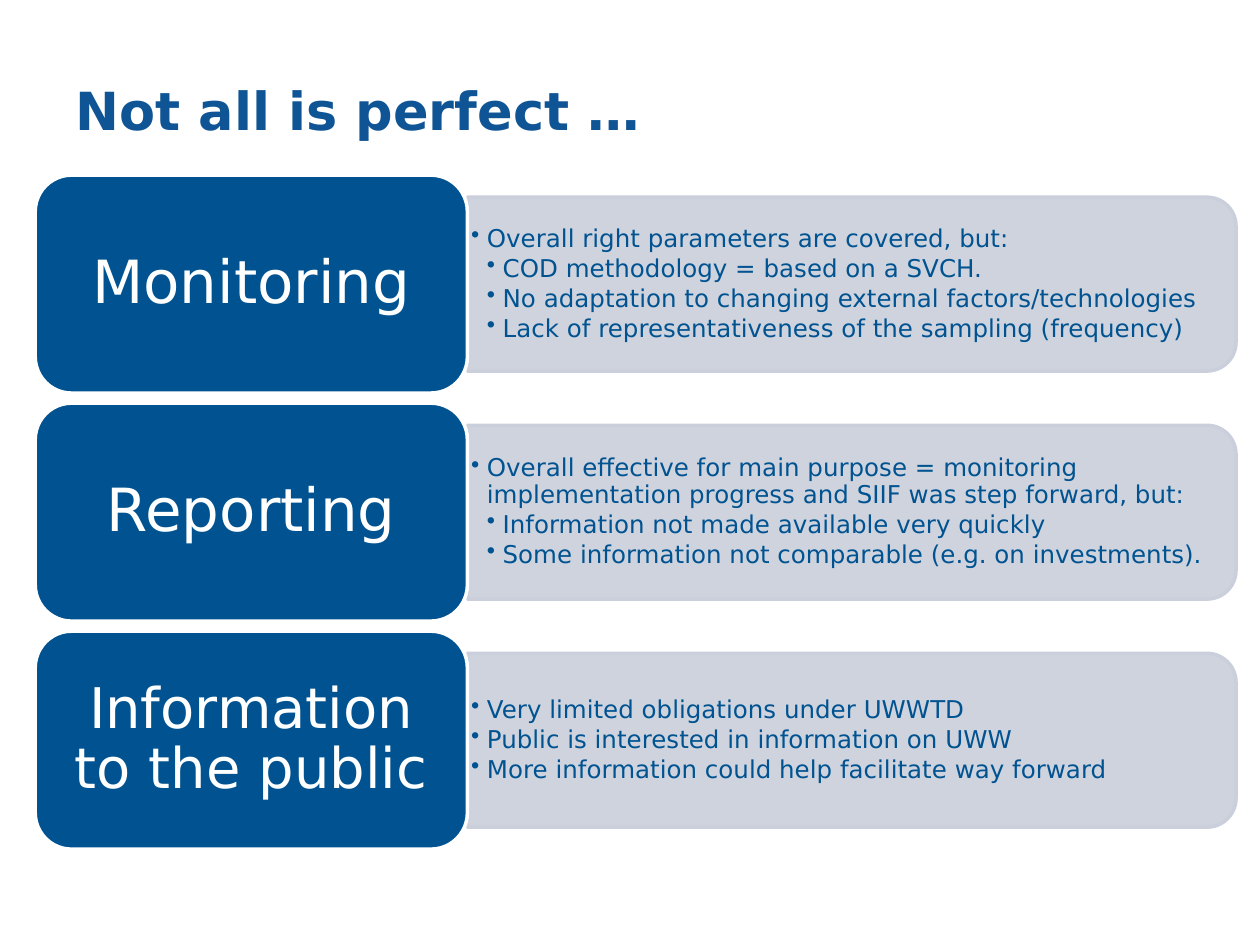
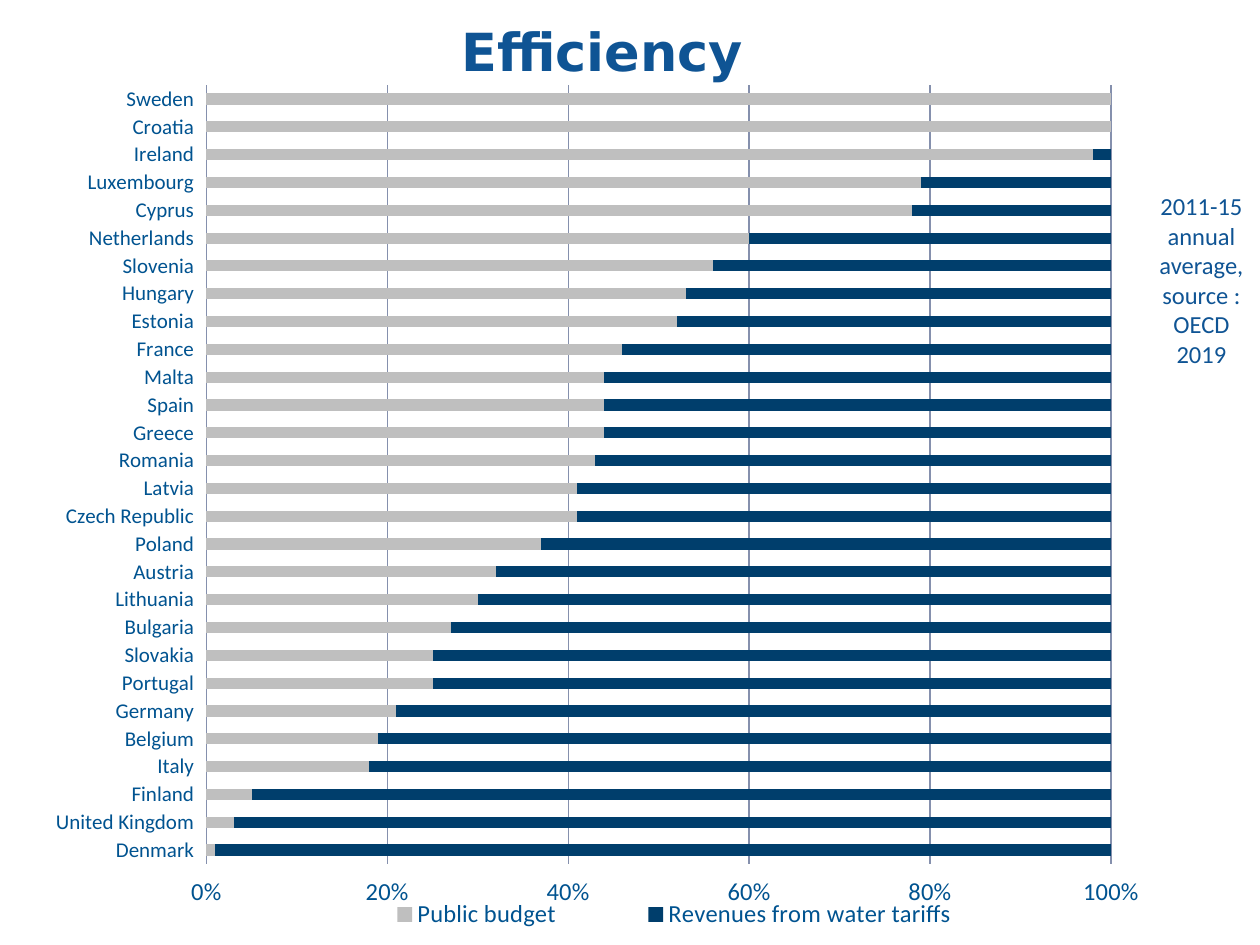
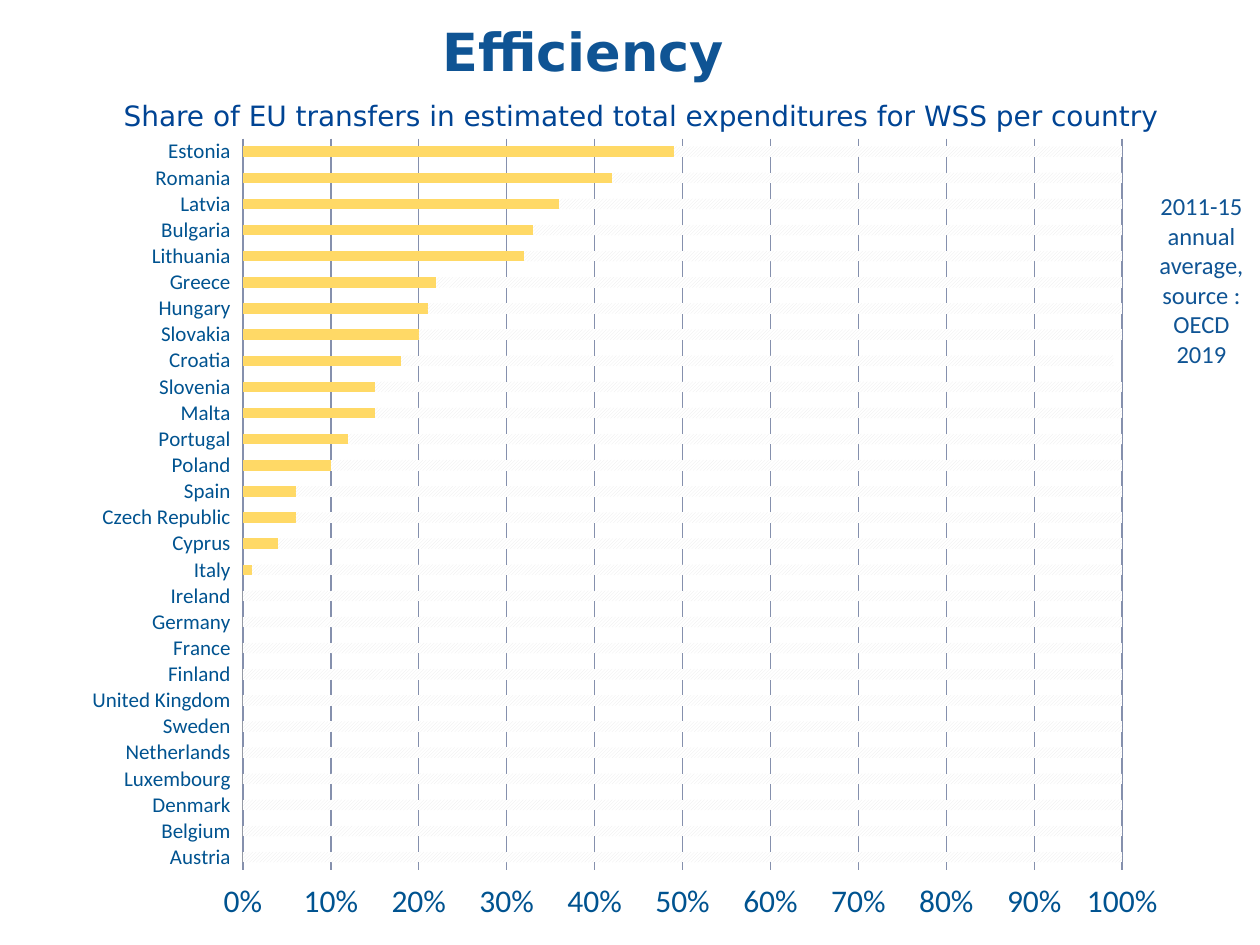
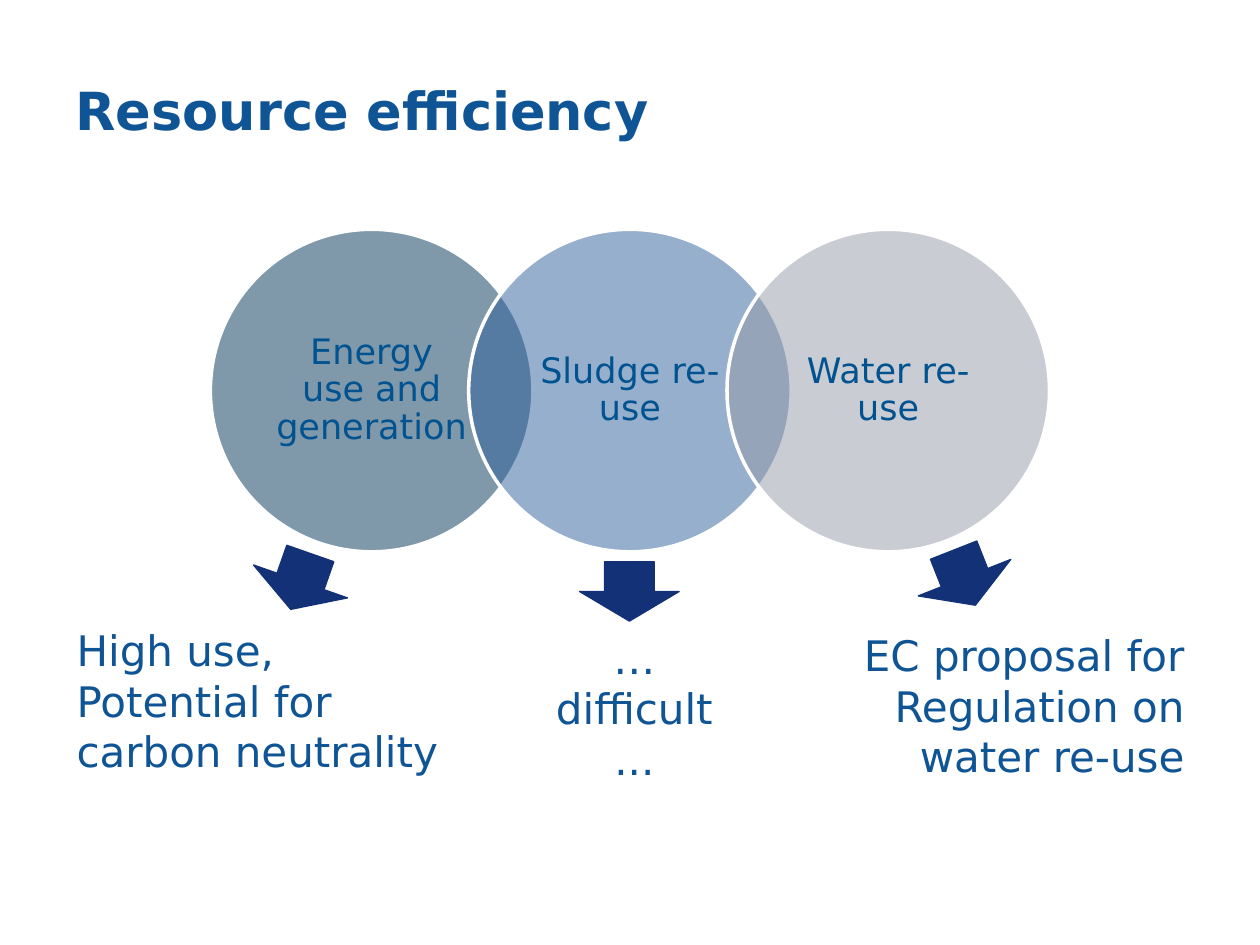
from dataclasses import dataclass

from lxml import etree
from pptx import Presentation
from pptx.chart.data import CategoryChartData
from pptx.dml.color import RGBColor
from pptx.enum.chart import XL_CHART_TYPE, XL_LEGEND_POSITION, XL_TICK_MARK
from pptx.enum.dml import MSO_PATTERN
from pptx.enum.shapes import MSO_SHAPE
from pptx.enum.text import MSO_ANCHOR, MSO_AUTO_SIZE, PP_ALIGN
from pptx.oxml.ns import qn
from pptx.util import Emu, Inches, Pt

LEFT, MID, RIGHT = PP_ALIGN.LEFT, PP_ALIGN.CENTER, PP_ALIGN.RIGHT
TOP, CENTRE = MSO_ANCHOR.TOP, MSO_ANCHOR.MIDDLE
ROUND, TAB = MSO_SHAPE.ROUNDED_RECTANGLE, MSO_SHAPE.ROUND_2_SAME_RECTANGLE
DISC, ARROW = MSO_SHAPE.OVAL, MSO_SHAPE.RIGHT_ARROW
STACK, SHARE = XL_CHART_TYPE.BAR_STACKED, XL_CHART_TYPE.BAR_STACKED_100
BELOW, OUT = XL_LEGEND_POSITION.BOTTOM, XL_TICK_MARK.OUTSIDE
HATCH = MSO_PATTERN.DARK_UPWARD_DIAGONAL

WIDTH, HEIGHT = Inches(10), Inches(7.5)
COLS, ROWS = 100, 75  # the grid that all places are given in


@dataclass(frozen=True)
class Theme:
    face: str = "DejaVu Sans"
    chart_face: str = "Calibri"
    title: str = "0F5494"
    blue: str = "005390"
    deep: str = "004494"
    navy: str = "133176"
    panel: str = "CACFDB"
    white: str = "FFFFFF"
    grid: str = "8590AD"
    budget: str = "BFBFBF"
    tariff: str = "003E6C"
    funds: str = "FFD966"
    rest: str = "EAEAEA"
    discs: tuple = ("003257", "2E609C", "959BA7")
    head_size: int = 30
    label_size: int = 34
    note_size: int = 24
    disc_size: int = 20
    sub_size: int = 16
    list_size: int = 14
    cat_size: int = 12


T = Theme()

TOPICS = [
    ("Monitoring", T.label_size, [
        (0, "Overall right parameters are covered, but:"),
        (1, "COD methodology = based on a SVCH."),
        (1, "No adaptation to changing external factors/technologies"),
        (1, "Lack of representativeness of the sampling (frequency)")]),
    ("Reporting", T.label_size, [
        (0, "Overall effective for main purpose = monitoring implementation "
            "progress and SIIF was step forward, but:"),
        (1, "Information not made available very quickly"),
        (1, "Some information not comparable (e.g. on investments).")]),
    ("Information to the public", T.label_size - 2, [
        (0, "Very limited obligations under UWWTD"),
        (0, "Public is interested in information on UWW"),
        (0, "More information could help facilitate way forward")]),
]

# Percent paid from the public budget; tariffs pay the rest
BUDGET = {
    "Denmark": 1, "United Kingdom": 3, "Finland": 5, "Italy": 18,
    "Belgium": 19, "Germany": 21, "Portugal": 25, "Slovakia": 25,
    "Bulgaria": 27, "Lithuania": 30, "Austria": 32, "Poland": 37,
    "Czech Republic": 41, "Latvia": 41, "Romania": 43, "Greece": 44,
    "Spain": 44, "Malta": 44, "France": 46, "Estonia": 52, "Hungary": 53,
    "Slovenia": 56, "Netherlands": 60, "Cyprus": 78, "Luxembourg": 79,
    "Ireland": 98, "Croatia": 100, "Sweden": 100,
}

# Share of EU transfers, and the share left over
FUNDS = {
    "Austria": (0, 1), "Belgium": (0, 1), "Denmark": (0, 1),
    "Luxembourg": (0, 1), "Netherlands": (0, 1), "Sweden": (0, 1),
    "United Kingdom": (0, 1), "Finland": (0, 1), "France": (0, 1),
    "Germany": (0, 1), "Ireland": (0, 1), "Italy": (0.01, 0.99),
    "Cyprus": (0.04, 0.96), "Czech Republic": (0.06, 0.94),
    "Spain": (0.06, 0.94), "Poland": (0.1, 0.9), "Portugal": (0.12, 0.88),
    "Malta": (0.15, 0.85), "Slovenia": (0.15, 0.85),
    "Croatia": (0.18, 0.81), "Slovakia": (0.2, 0.8),
    "Hungary": (0.21, 0.79), "Greece": (0.22, 0.78),
    "Lithuania": (0.32, 0.68), "Bulgaria": (0.33, 0.68),
    "Latvia": (0.36, 0.64), "Romania": (0.42, 0.58), "Estonia": (0.49, 0.51),
}


def place(col, row, cols, rows):
    """Turn grid cells into left, top, width and height."""
    return (Emu(round(WIDTH * col / COLS)), Emu(round(HEIGHT * row / ROWS)),
            Emu(round(WIDTH * cols / COLS)), Emu(round(HEIGHT * rows / ROWS)))


def rgb(code):
    return RGBColor.from_string(code)


def style(font, size, color, face=T.face, bold=False):
    font.size, font.name, font.bold = Pt(size), face, bold
    font.color.rgb = rgb(color)


# Text
def setup(frame, anchor, pads=(0.1, 0.05)):
    frame.word_wrap = True
    frame.auto_size = MSO_AUTO_SIZE.NONE
    frame.vertical_anchor = anchor
    frame.margin_left = frame.margin_right = Inches(pads[0])
    frame.margin_top = frame.margin_bottom = Inches(pads[1])


def write(frame, lines, size, color, align, face=T.face, space=None):
    for i, line in enumerate(lines):
        para = frame.paragraphs[0] if i == 0 else frame.add_paragraph()
        para.text, para.alignment = line, align
        if space:
            para.line_spacing = space
        style(para.font, size, color, face)


def note(slide, spot, lines, size, color, align, face=T.face, anchor=TOP):
    frame = slide.shapes.add_textbox(*place(*spot)).text_frame
    setup(frame, anchor)
    write(frame, lines, size, color, align, face)


def bullets(slide, spot, items):
    frame = slide.shapes.add_textbox(*place(*spot)).text_frame
    setup(frame, CENTRE, (0.03, 0.03))
    for i, (level, text) in enumerate(items):
        para = frame.paragraphs[0] if i == 0 else frame.add_paragraph()
        para.text, para.level = text, level
        props = para._p.get_or_add_pPr()
        props.set("marL", str(Inches(0.125 * (level + 1))))
        props.set("indent", str(-Inches(0.125)))
        etree.SubElement(props, qn("a:buChar")).set("char", "•")
        para.line_spacing = 0.9
        para.space_before = Pt(2 if i else 0)
        style(para.font, T.list_size, T.blue)


def page(deck, text, spot=(5, 3.6, 90, 10.2), align=LEFT, shift=0):
    """Add a slide with its title; shift moves centred text left."""
    slide = deck.slides.add_slide(deck.slide_layouts[5])
    title = slide.shapes.title
    title.left, title.top, title.width, title.height = place(*spot)
    frame = title.text_frame
    setup(frame, CENTRE)
    frame.margin_right = Inches(0.1 + 2 * shift)
    frame.text = text
    frame.paragraphs[0].alignment = align
    style(frame.paragraphs[0].font, T.head_size, T.title, bold=True)
    return slide


# Shapes
def draw(slide, kind, spot, fill, line, weight=2, alpha=None, turn=0):
    shape = slide.shapes.add_shape(kind, *place(*spot))
    shape.shadow.inherit = False
    shape.fill.solid()
    shape.fill.fore_color.rgb = rgb(fill)
    shape.line.color.rgb = rgb(line)
    shape.line.width = Pt(weight)
    shape.rotation = turn
    if alpha:
        color = shape.element.spPr.find(qn("a:solidFill"))[0]
        etree.SubElement(color, qn("a:alpha")).set("val", str(alpha * 1000))
    return shape


def topic(slide, row, label, size, items):
    tall, deep, wide = 17.3, 13.8, 61
    mid = row + tall / 2
    # The panel stands upright and is turned about its centre
    draw(slide, TAB, (37.1 + (wide - deep) / 2, mid - wide / 2, deep, wide),
         T.panel, T.panel, alpha=90, turn=90)
    bullets(slide, (37.1, row + 1.3, 60.3, tall - 2.6), items)
    card = draw(slide, ROUND, (2.8, row, 34.3, tall), T.blue, T.white)
    setup(card.text_frame, CENTRE, (0.07, 0.07))
    write(card.text_frame, [label], size, T.white, MID, space=0.9)


def disc(slide, col, fill, label):
    shape = draw(slide, DISC, (col, 18.2, 25.6, 25.6), fill, T.white, alpha=50)
    setup(shape.text_frame, CENTRE, (0.14, 0.03))
    write(shape.text_frame, [label], T.disc_size, T.blue, MID, space=0.9)


# Charts
def lay(parent, index, inner=False, **shares):
    """Fix a chart part by shares of the chart's size."""
    for old in parent.findall(qn("c:layout")):
        parent.remove(old)
    layout = etree.Element(qn("c:layout"))
    manual = etree.SubElement(layout, qn("c:manualLayout"))
    values = {"xMode": "edge", "yMode": "edge", **shares}
    if inner:
        values = {"layoutTarget": "inner", **values}
    for name, value in values.items():
        etree.SubElement(manual, qn("c:" + name)).set("val", str(value))
    parent.insert(index, layout)


def bars(slide, kind, spot, cats, rows, plot, step, size):
    data = CategoryChartData()
    data.categories = cats
    for name, values in rows:
        data.add_series(name, values)
    chart = slide.shapes.add_chart(kind, *place(*spot), data).chart
    chart.has_title = chart.has_legend = False
    style(chart.font, 11, T.blue, T.chart_face)
    group = chart.plots[0]
    group.gap_width, group.overlap = 150, 100
    group.vary_by_categories = False
    for axis, points in ((chart.category_axis, T.cat_size),
                         (chart.value_axis, size)):
        axis.major_tick_mark = OUT
        axis.format.line.fill.background()
        style(axis.tick_labels.font, points, T.blue, T.chart_face)
    chart.category_axis.has_major_gridlines = False
    scale = chart.value_axis
    scale.minimum_scale, scale.maximum_scale, scale.major_unit = 0, 1, step
    scale.tick_labels.number_format = "0%"
    scale.tick_labels.number_format_is_linked = False
    scale.has_major_gridlines = True
    scale.major_gridlines.format.line.color.rgb = rgb(T.grid)
    scale.major_gridlines.format.line.width = Pt(0.75)
    area = chart.element.find(".//" + qn("c:plotArea"))
    lay(area, 0, inner=True, **dict(zip("xywh", plot)))
    return chart


def paint(series, color):
    series.format.fill.solid()
    series.format.fill.fore_color.rgb = rgb(color)


def source(slide):
    note(slide, (90.9, 14.7, 8.9, 15.1),
         ["2011-15 annual average, source : OECD 2019"],
         T.list_size, T.title, MID, T.chart_face)


# Slides
def issues(deck):
    slide = page(deck, "Not all is perfect …")
    for i, (label, size, items) in enumerate(TOPICS):
        topic(slide, 13.9 + 18.1 * i, label, size, items)


def tariffs(deck):
    slide = page(deck, "Efficiency", (2.8, -1.1, 90, 10.2), MID)
    paid = list(BUDGET.values())
    chart = bars(slide, SHARE, (2.8, 6, 88.2, 69), list(BUDGET),
                 [("Public budget", paid),
                  ("Revenues from water tariffs", [100 - v for v in paid])],
                 (0.154, 0.011, 0.814, 0.896), 0.2, T.list_size)
    for series, color in zip(chart.series, (T.budget, T.tariff)):
        paint(series, color)
    chart.has_legend = True
    legend = chart.legend
    legend.position = BELOW
    legend.include_in_layout = False
    style(legend.font, T.list_size, T.blue, T.chart_face)
    lay(chart.element.find(".//" + qn("c:legend")), 1,
        x=0.25, y=0.94, w=0.65, h=0.05)
    source(slide)


def transfers(deck):
    slide = page(deck, "Efficiency", (2.8, -1.1, 90, 10.2), MID, shift=0.15)
    source(slide)
    funds, rest = zip(*FUNDS.values())
    chart = bars(slide, STACK, (5.9, 9.2, 86.9, 64.6), list(FUNDS),
                 [("Series 1", funds), ("Series 2", rest)],
                 (0.154, 0.028, 0.803, 0.899), 0.1, 18)
    first, second = chart.series
    paint(first, T.funds)
    fill = second.format.fill
    fill.patterned()
    fill.pattern = HATCH
    fill.fore_color.rgb, fill.back_color.rgb = rgb(T.rest), rgb(T.white)
    note(slide, (5.9, 6.8, 90, 4.7),
         ["Share of EU transfers in estimated total expenditures for WSS "
          "per country"], T.sub_size, T.deep, MID, anchor=CENTRE)


def reuse(deck):
    slide = page(deck, "Resource efficiency")
    labels = ("Energy use and generation", "Sludge re-use", "Water re-use")
    for i, (fill, label) in enumerate(zip(T.discs, labels)):
        disc(slide, 16.7 + 20.5 * i, fill, label)
    for col, row, turn in ((21.5, 42.2, 109.3), (47.6, 43, 90),
                           (74.2, 41.9, 68.5)):
        draw(slide, ARROW, (col, row, 4.7, 7.9), T.navy, T.navy, 0.75,
             turn=turn)
    for spot, lines, align in (
            ((5.1, 49.1, 32.4, 17.2),
             ["High use,", "Potential for carbon neutrality"], LEFT),
            ((41.3, 49.7, 18.1, 13.1), ["… difficult", "..."], MID),
            ((62.6, 49.5, 32.4, 13.1),
             ["EC proposal for Regulation on water re-use"], RIGHT)):
        note(slide, spot, lines, T.note_size, T.title, align)


def main():
    deck = Presentation()
    deck.slide_width, deck.slide_height = WIDTH, HEIGHT
    for build in (issues, tariffs, transfers, reuse):
        build(deck)
    deck.save("out.pptx")


if __name__ == "__main__":
    main()
